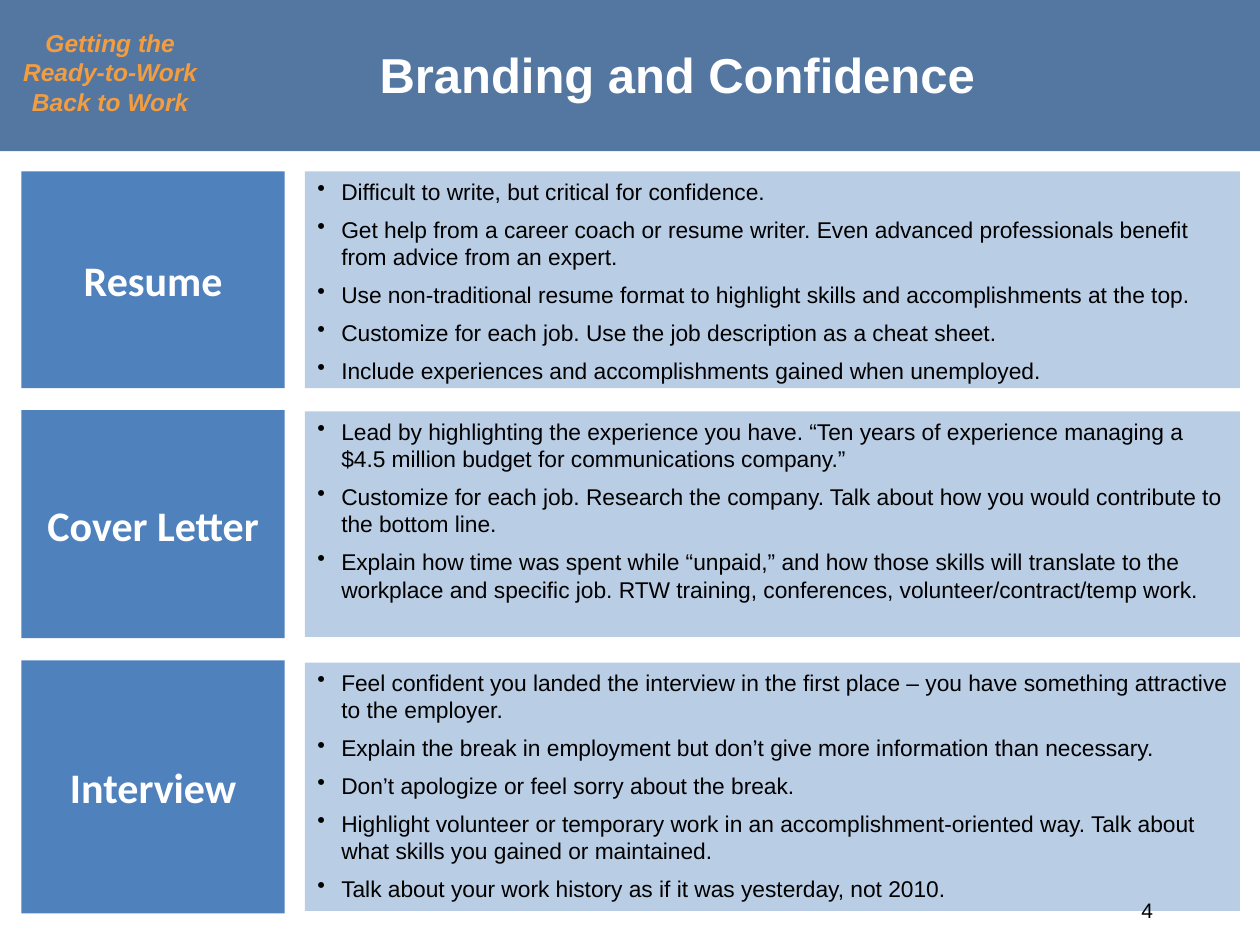
from dataclasses import dataclass

import pptx
import pptx.dml.color
import pptx.enum.shapes
import pptx.enum.text
import pptx.oxml
import pptx.oxml.ns
import pptx.util
from pptx.util import Inches, Pt

ALIGN = pptx.enum.text.PP_ALIGN
ANCHOR = pptx.enum.text.MSO_ANCHOR

SLIDE_WIDTH, SLIDE_HEIGHT = 10, 7.5
HEADER_HEIGHT = 1.2
ROWS_TOP, ROW_GAP = 1.36, 0.175
LABEL_LEFT, LABEL_WIDTH = 0.17, 2.09
ADVICE_LEFT, ADVICE_WIDTH = 2.42, 7.42
BULLET_INDENT = 0.19


@dataclass(frozen=True)
class Theme:
    header: str = "376092"
    label: str = "4F81BD"
    advice: str = "B9CDE5"
    light: str = "FFFFFF"
    dark: str = "000000"
    accent: str = "F39D3F"
    body_font: str = "Arial"
    label_font: str = "Calibri"
    title_size: float = 28
    label_size: float = 24
    motto_size: float = 14
    advice_size: float = 13
    number_size: float = 12


@dataclass(frozen=True)
class Box:
    left: float
    top: float
    width: float
    height: float

    def lengths(self) -> list:
        return [Inches(n) for n in (self.left, self.top, self.width, self.height)]


@dataclass(frozen=True)
class TextStyle:
    size: float
    color: str
    font: str
    bold: bool = False
    italic: bool = False
    align: ALIGN = ALIGN.CENTER


@dataclass(frozen=True)
class Topic:
    """One row; panel_trim is how much lower its advice panel is than its label."""
    name: str
    height: float
    panel_trim: float
    advice: tuple[str, ...]


THEME = Theme()

TOPICS = (
    Topic("Resume", 1.72, 0, (
        "Difficult to write, but critical for confidence.",
        "Get help from a career coach or resume writer. Even advanced professionals "
        "benefit from advice from an expert.",
        "Use non-traditional resume format to highlight skills and accomplishments at the top.",
        "Customize for each job. Use the job description as a cheat sheet.",
        "Include experiences and accomplishments gained when unemployed.",
    )),
    Topic("Cover Letter", 1.81, 0.02, (
        "Lead by highlighting the experience you have. “Ten years of experience managing a "
        "$4.5 million budget for communications company.”",
        "Customize for each job. Research the company. Talk about how you would contribute "
        "to the bottom line.",
        "Explain how time was spent while “unpaid,” and how those skills will translate to "
        "the workplace and specific job. RTW training, conferences, volunteer/contract/temp work.",
    )),
    Topic("Interview", 2.01, 0.04, (
        "Feel confident you landed the interview in the first place – you have something "
        "attractive to the employer.",
        "Explain the break in employment but don’t give more information than necessary.",
        "Don’t apologize or feel sorry about the break.",
        "Highlight volunteer or temporary work in an accomplishment-oriented way. Talk about "
        "what skills you gained or maintained.",
        "Talk about your work history as if it was yesterday, not 2010.",
    )),
)


def rgb(color: str) -> pptx.dml.color.RGBColor:
    return pptx.dml.color.RGBColor.from_string(color)


def add_panel(slide, box: Box, color: str):
    panel = slide.shapes.add_shape(
        pptx.enum.shapes.MSO_SHAPE.RECTANGLE, *box.lengths())
    panel.shadow.inherit = False
    panel.fill.solid()
    panel.fill.fore_color.rgb = rgb(color)
    panel.line.fill.background()
    return panel


def set_opacity(panel, percent: int) -> None:
    color = panel.fill._xPr.find(".//" + pptx.oxml.ns.qn("a:srgbClr"))
    color.append(pptx.oxml.parse_xml(
        f'<a:alpha {pptx.oxml.ns.nsdecls("a")} val="{percent * 1000}"/>'))


def write(frame, lines: tuple[str, ...], style: TextStyle, anchor: ANCHOR) -> None:
    frame.word_wrap = True
    frame.vertical_anchor = anchor
    frame.text = "\n".join(lines)
    for paragraph in frame.paragraphs:
        paragraph.alignment = style.align
        font = paragraph.font
        font.name, font.size = style.font, Pt(style.size)
        font.bold, font.italic = style.bold, style.italic
        font.color.rgb = rgb(style.color)


def add_text(slide, box: Box, text: str, style: TextStyle) -> None:
    frame = slide.shapes.add_textbox(*box.lengths()).text_frame
    write(frame, (text,), style, ANCHOR.MIDDLE)


def add_bullets(frame) -> None:
    for paragraph in frame.paragraphs:
        paragraph.space_before = paragraph.space_after = Pt(3)
        properties = paragraph._p.get_or_add_pPr()
        properties.set("marL", str(Inches(BULLET_INDENT)))
        properties.set("indent", str(-Inches(BULLET_INDENT)))
        bullet = pptx.oxml.parse_xml(
            f'<a:buChar {pptx.oxml.ns.nsdecls("a")} char="•"/>')
        properties.find(pptx.oxml.ns.qn("a:defRPr")).addprevious(bullet)


def add_header(slide) -> None:
    band = add_panel(slide, Box(0, 0, SLIDE_WIDTH, HEADER_HEIGHT), THEME.header)
    set_opacity(band, 85)
    add_text(slide, Box(0.75, 0, SLIDE_WIDTH - 0.75, 1.17), "Branding and Confidence",
             TextStyle(THEME.title_size, THEME.light, THEME.body_font, bold=True))
    add_text(slide, Box(0, -0.02, 1.75, 1.18), "Getting the Ready-to-Work Back to Work",
             TextStyle(THEME.motto_size, THEME.accent, THEME.body_font,
                       bold=True, italic=True))


def add_topic(slide, topic: Topic, top: float) -> None:
    label = add_panel(slide, Box(LABEL_LEFT, top, LABEL_WIDTH, topic.height), THEME.label)
    write(label.text_frame, (topic.name,),
          TextStyle(THEME.label_size, THEME.light, THEME.label_font, bold=True),
          ANCHOR.MIDDLE)
    advice = add_panel(slide, Box(ADVICE_LEFT, top + topic.panel_trim / 2, ADVICE_WIDTH,
                                  topic.height - topic.panel_trim), THEME.advice)
    write(advice.text_frame, topic.advice,
          TextStyle(THEME.advice_size, THEME.dark, THEME.body_font, align=ALIGN.LEFT),
          ANCHOR.TOP)
    add_bullets(advice.text_frame)


def main() -> None:
    deck = pptx.Presentation()
    deck.slide_width, deck.slide_height = Inches(SLIDE_WIDTH), Inches(SLIDE_HEIGHT)
    slide = deck.slides.add_slide(deck.slide_layouts[6])
    add_header(slide)
    top = ROWS_TOP
    for topic in TOPICS:
        add_topic(slide, topic, top)
        top += topic.height + ROW_GAP
    add_text(slide, Box(6.92, 7.02, 2.33, 0.4), "4",
             TextStyle(THEME.number_size, THEME.dark, THEME.body_font, align=ALIGN.RIGHT))
    deck.save("out.pptx")


if __name__ == "__main__":
    main()
